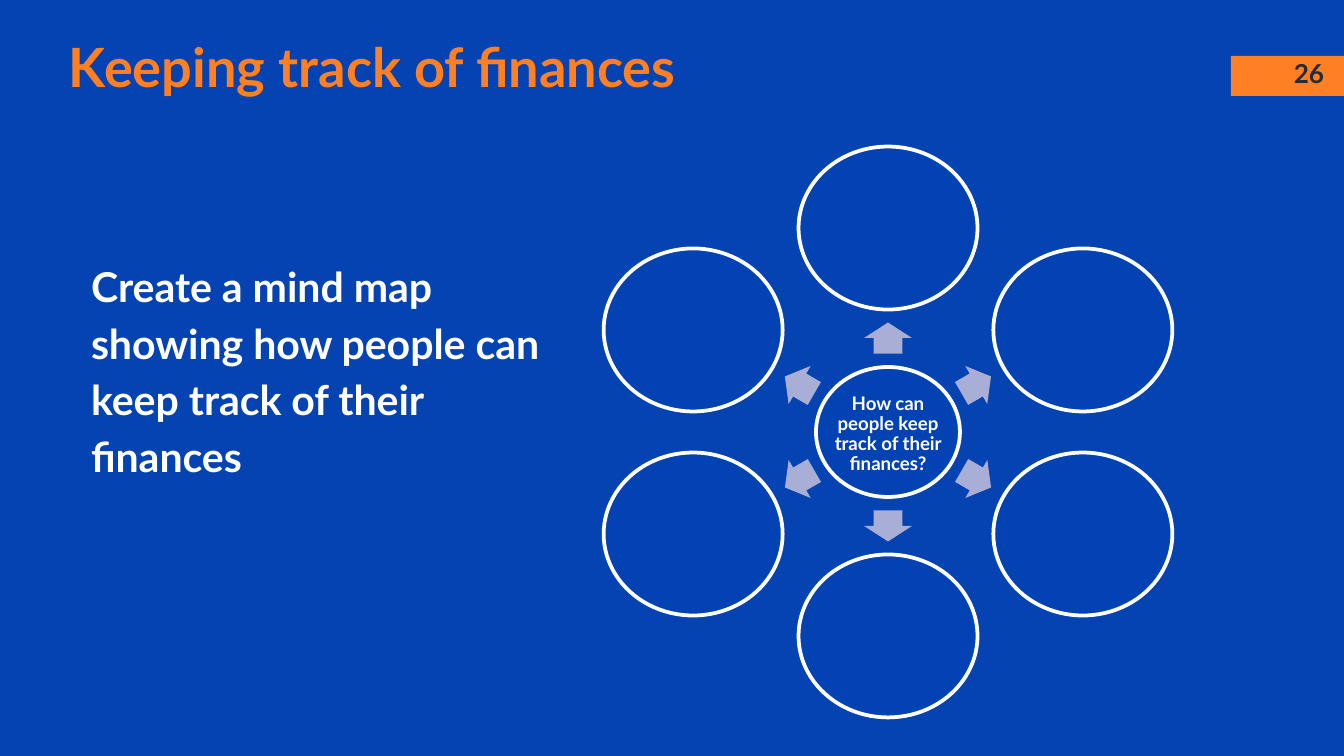
"""Build a slide with a mind map on keeping track of finances."""
from math import cos, radians, sin

from pptx import Presentation
from pptx.dml.color import RGBColor
from pptx.enum.shapes import MSO_SHAPE
from pptx.enum.text import MSO_ANCHOR, PP_ALIGN
from pptx.util import Emu, Pt

SCALE = 914400 / 134.4
BLUE = RGBColor(0x05, 0x43, 0xB3)
DISC = RGBColor(0x02, 0x42, 0xB3)
ORANGE = RGBColor(0xFF, 0x80, 0x22)
LILAC = RGBColor(0xA8, 0xAE, 0xD5)
DARK = RGBColor(0x26, 0x2A, 0x33)
WHITE = RGBColor(0xFF, 0xFF, 0xFF)


def add_form(kind, x, y, w, h, fill, line=None):
    form = slide.shapes.add_shape(kind, *[Emu(round(n * SCALE)) for n in (x, y, w, h)])
    form.shadow.inherit = False
    form.fill.solid()
    form.fill.fore_color.rgb = fill
    if line is None:
        form.line.fill.background()
    else:
        form.line.color.rgb = line
        form.line.width = Pt(2)
    return form


def add_text(text, x, y, w, h, size, color, inset, anchor, align, space):
    box = slide.shapes.add_textbox(*[Emu(round(n * SCALE)) for n in (x, y, w, h)])
    frame = box.text_frame
    frame.word_wrap = True
    frame.vertical_anchor = anchor
    pad = Emu(round(inset * SCALE))
    frame.margin_left = frame.margin_right = pad
    frame.margin_top = frame.margin_bottom = pad
    para = frame.paragraphs[0]
    para.alignment = align
    para.line_spacing = space
    run = para.add_run()
    run.text = text
    run.font.name = "Lato"
    run.font.size = Pt(size)
    run.font.bold = True
    run.font.color.rgb = color


deck = Presentation()
deck.slide_width = Emu(round(1344 * SCALE))
deck.slide_height = Emu(round(756 * SCALE))
slide = deck.slides.add_slide(deck.slide_layouts[6])
slide.background.fill.solid()
slide.background.fill.fore_color.rgb = BLUE

add_form(MSO_SHAPE.RECTANGLE, 1231, 56, 113, 40, ORANGE)
add_text("26", 1274, 56, 70, 34, 14, DARK, 13,
         MSO_ANCHOR.MIDDLE, PP_ALIGN.CENTER, 1.0)

mid_x, mid_y = 888, 432
add_form(MSO_SHAPE.OVAL, mid_x - 72, mid_y - 65, 144, 130, DISC, WHITE)
add_text("How can people keep track of their finances?",
         mid_x - 62, 388, 124, 93, 10, WHITE, 1,
         MSO_ANCHOR.MIDDLE, PP_ALIGN.CENTER, 0.9)

for angle in range(270, 630, 60):
    dx, dy = cos(radians(angle)), sin(radians(angle))
    w, h = (31, 48) if angle % 180 == 90 else (34, 44)
    arrow = add_form(MSO_SHAPE.RIGHT_ARROW, mid_x + 102 * dx - w / 2,
                     mid_y + 94 * dy - h / 2, w, h, LILAC)
    arrow.adjustments[0] = 0.6
    arrow.adjustments[1] = 0.5
    arrow.rotation = angle % 360
    add_form(MSO_SHAPE.OVAL, mid_x + 225 * dx - 89.5, mid_y + 204 * dy - 81.5,
             179, 163, DISC, WHITE)

add_text("Create a mind map showing how people can keep track of their finances",
         78, 241, 482, 249, 22, WHITE, 13, MSO_ANCHOR.TOP, PP_ALIGN.LEFT, 1.15)
add_text("Keeping track of finances", 56, 28, 1137, 75, 29, ORANGE, 13,
         MSO_ANCHOR.MIDDLE, PP_ALIGN.LEFT, 1.0)

deck.save("out.pptx")
